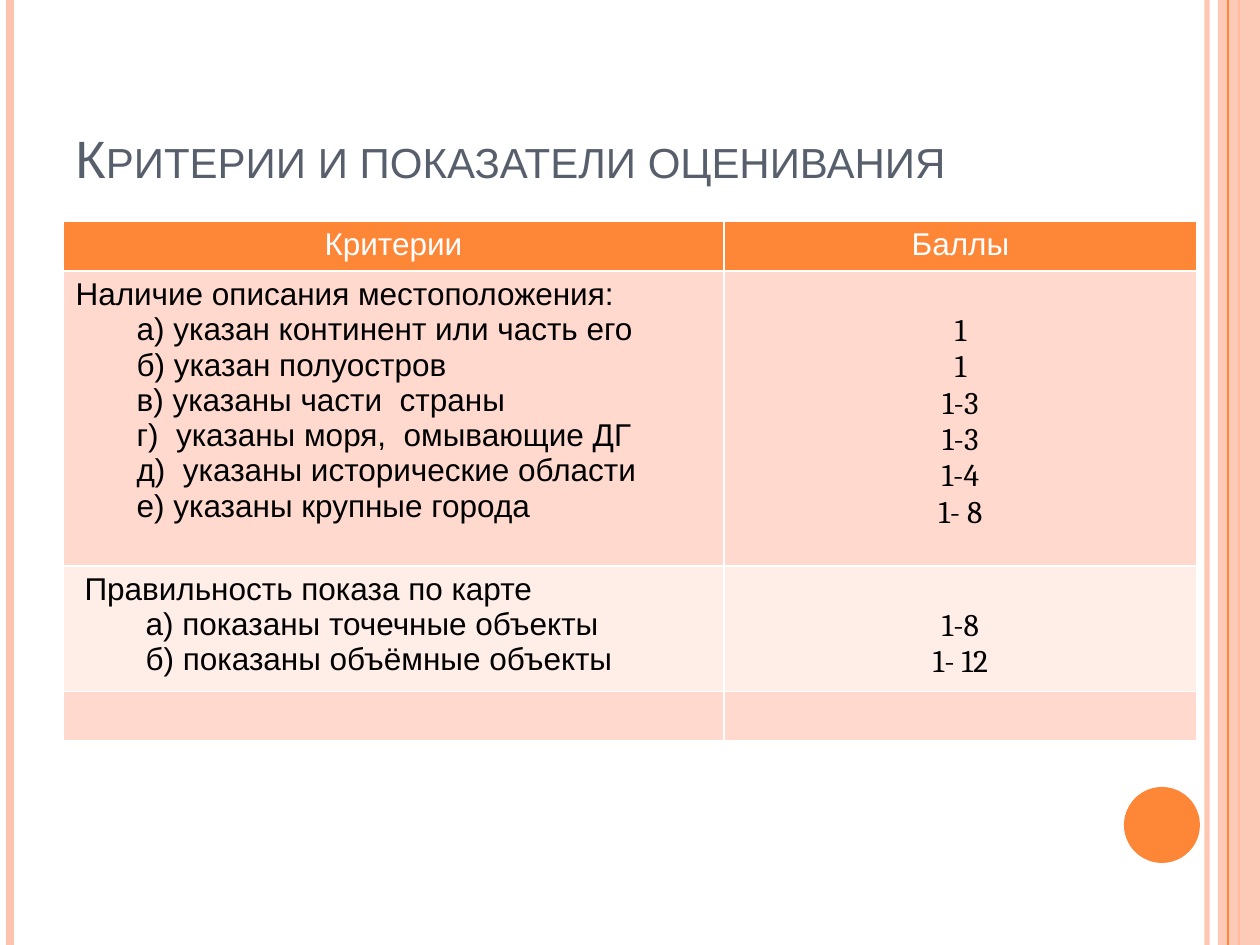
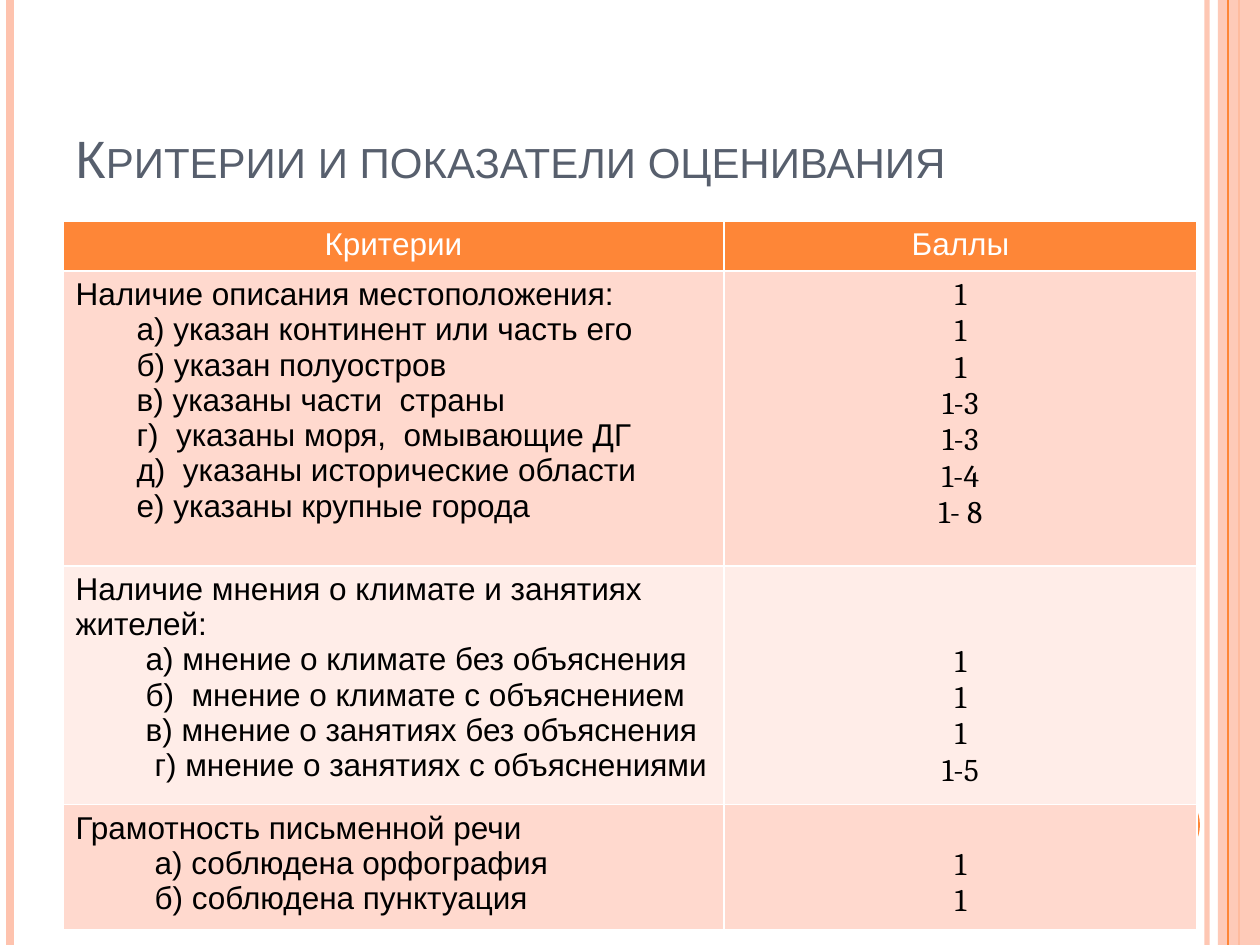
from lxml.etree import SubElement
from pptx import Presentation
from pptx.dml.color import RGBColor
from pptx.enum.shapes import MSO_CONNECTOR, MSO_SHAPE
from pptx.enum.text import MSO_ANCHOR, PP_ALIGN
from pptx.oxml.ns import qn
from pptx.util import Emu, Pt

SLIDE_WIDTH, SLIDE_HEIGHT = 1260, 945
EMU_PER_PX = 914400 / 126

COLORS = {
    "accent": "FE8637", "pale": "FEC3AE", "title": "575F6D", "white": "FFFFFF",
    "black": "000000", "band_dark": "FFD9CE", "band_light": "FFEDE8",
}
TITLE = "Критерии и показатели оценивания"
HEADER = ("Критерии", "Баллы")

LOCATION = {
    "heading": "Наличие описания местоположения:",
    "items": ["а) указан континент или часть его", "б) указан полуостров",
              "в) указаны части  страны", "г)  указаны моря,  омывающие ДГ",
              "д)  указаны исторические области", "е) указаны крупные города"],
    "indents": [61] * 6,
    "height": 295,
}
LOCATION_SCORES = ["1", "1", "1-3", "1-3", "1-4", "1- 8"]

# "skipped" counts the heading lines that have no score beside them.
SLIDES = [
    [
        {**LOCATION, "scores": LOCATION_SCORES, "skipped": 1},
        {"heading": "Правильность показа по карте", "heading_indent": 9,
         "items": ["а) показаны точечные объекты", "б) показаны объёмные объекты"],
         "indents": [70, 70], "scores": ["1-8", "1- 12"], "skipped": 1, "height": 121},
        {"height": 50},
    ],
    [
        {**LOCATION, "scores": ["1"] + LOCATION_SCORES, "skipped": 0},
        {"heading": "Наличие мнения о климате и занятиях жителей:",
         "items": ["а) мнение о климате без объяснения", "б)  мнение о климате с объяснением",
                   "в) мнение о занятиях без объяснения", "г) мнение о занятиях с объяснениями"],
         "indents": [70, 70, 70, 79], "scores": ["1", "1", "1", "1-5"],
         "skipped": 2, "height": 231},
        {"heading": "Грамотность письменной речи",
         "items": ["а) соблюдена орфография", "б) соблюдена пунктуация"],
         "indents": [79, 79], "scores": ["1", "1"], "skipped": 1, "height": 121},
    ],
]

# x, color, width in points, opacity in percent
RAILS_BELOW = [(1207, "pale", 3, 93), (10, "pale", 4.5, 100), (1239, "accent", 1.5, 100)]
RAIL_ABOVE = (1228, "accent", 0.75, 100)
SIDE_BAND = (1218, 0, 42, SLIDE_HEIGHT)
CIRCLE = (1124, 787, 76, 76)
TITLE_BOX = (63, 38, 1029, 157)
TABLE_LEFT, TABLE_TOP, COLUMNS = 63, 221, (661, 473)
HEADER_HEIGHT, CELL_MARGIN, LINE_HEIGHT = 50, 6, 36

HEADER_FONT = {"name": "Arial", "size": Pt(18), "bold": False, "color": "white"}
CRITERIA_FONT = {**HEADER_FONT, "color": "black"}
SCORE_FONT = {**CRITERIA_FONT, "name": "Cambria"}
TITLE_FONT = {"name": "Arial", "size": Pt(30), "color": "title"}


def px(*lengths):
    return [Emu(round(length * EMU_PER_PX)) for length in lengths]


def rgb(name):
    return RGBColor.from_string(COLORS[name])


def set_font(font, values):
    for name, value in values.items():
        if name == "color":
            font.color.rgb = rgb(value)
        else:
            setattr(font, name, value)


def set_opacity(properties, percent):
    color = next(properties.iter(qn("a:srgbClr")))
    SubElement(color, qn("a:alpha"), val=str(percent * 1000))


def add_rail(slide, x, color, width, opacity):
    rail = slide.shapes.add_connector(MSO_CONNECTOR.STRAIGHT, *px(x, 0, x, SLIDE_HEIGHT))
    rail.line.color.rgb = rgb(color)
    rail.line.width = Pt(width)
    properties = rail._element.spPr
    if opacity < 100:
        set_opacity(properties, opacity)
    SubElement(properties, qn("a:effectLst"))


def add_plain_shape(slide, kind, box, color):
    shape = slide.shapes.add_shape(kind, *px(*box))
    shape.shadow.inherit = False
    shape.fill.solid()
    shape.fill.fore_color.rgb = rgb(color)
    shape.line.fill.background()
    return shape


def add_frame(slide):
    """Draw the rails, side band and circle common to every slide."""
    for rail in RAILS_BELOW:
        add_rail(slide, *rail)
    band = add_plain_shape(slide, MSO_SHAPE.RECTANGLE, SIDE_BAND, "pale")
    set_opacity(band._element.spPr, 87)
    add_rail(slide, *RAIL_ABOVE)
    add_plain_shape(slide, MSO_SHAPE.OVAL, CIRCLE, "accent")


def add_title(slide):
    frame = slide.shapes.add_textbox(*px(*TITLE_BOX)).text_frame
    frame.word_wrap = True
    frame.vertical_anchor = MSO_ANCHOR.BOTTOM
    run = frame.paragraphs[0].add_run()
    run.text = TITLE
    set_font(run.font, TITLE_FONT)
    run.font._element.set("cap", "small")


def style_cell(cell, color):
    properties = cell._tc.get_or_add_tcPr()
    for side in ("lnL", "lnR", "lnT", "lnB"):
        border = SubElement(properties, qn(f"a:{side}"), w=str(Pt(1)))
        fill = SubElement(border, qn("a:solidFill"))
        SubElement(fill, qn("a:srgbClr"), val=COLORS["white"])
    cell.fill.solid()
    cell.fill.fore_color.rgb = rgb(color)
    cell.margin_top, cell.margin_bottom = px(CELL_MARGIN, CELL_MARGIN)


def write_lines(cell, lines, font, alignment, indents=None):
    frame = cell.text_frame
    for index, line in enumerate(lines):
        paragraph = frame.add_paragraph() if index else frame.paragraphs[0]
        paragraph.alignment = alignment
        if indents and indents[index]:
            paragraph._p.get_or_add_pPr().set("marL", str(px(indents[index])[0]))
        run = paragraph.add_run()
        run.text = line
        set_font(run.font, font)


def add_criteria_table(slide, groups):
    heights = [HEADER_HEIGHT] + [group["height"] for group in groups]
    box = px(TABLE_LEFT, TABLE_TOP, sum(COLUMNS), sum(heights))
    table = slide.shapes.add_table(len(heights), len(COLUMNS), *box).table
    table.first_row = table.horz_banding = False
    for column, width in zip(table.columns, px(*COLUMNS)):
        column.width = width
    for index, (row, height) in enumerate(zip(table.rows, px(*heights))):
        row.height = height
        band = "band_dark" if index % 2 else "band_light"
        for cell in row.cells:
            style_cell(cell, band if index else "accent")
    for column, label in enumerate(HEADER):
        write_lines(table.cell(0, column), [label], HEADER_FONT, PP_ALIGN.CENTER)
    for index, group in enumerate(groups, start=1):
        if "heading" not in group:
            continue
        criteria, scores = table.cell(index, 0), table.cell(index, 1)
        write_lines(criteria, [group["heading"]] + group["items"], CRITERIA_FONT,
                    PP_ALIGN.LEFT, [group.get("heading_indent", 0)] + group["indents"])
        write_lines(scores, group["scores"], SCORE_FONT, PP_ALIGN.CENTER)
        scores.margin_top = px(CELL_MARGIN + group["skipped"] * LINE_HEIGHT)[0]


def main():
    presentation = Presentation()
    presentation.slide_width, presentation.slide_height = px(SLIDE_WIDTH, SLIDE_HEIGHT)
    for groups in SLIDES:
        slide = presentation.slides.add_slide(presentation.slide_layouts[6])
        add_frame(slide)
        add_title(slide)
        add_criteria_table(slide, groups)
    presentation.save("out.pptx")


if __name__ == "__main__":
    main()
